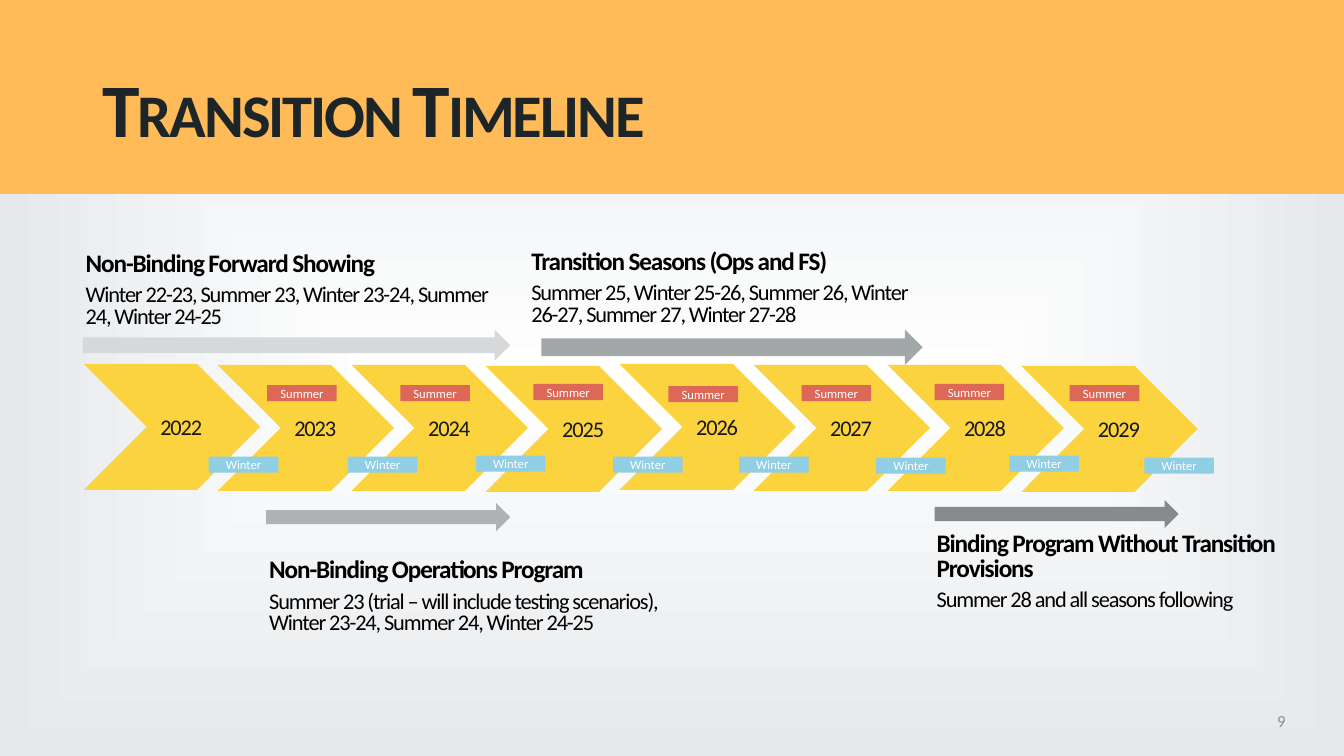
"""Build the transition timeline slide."""
from lxml.etree import SubElement
from pptx import Presentation
from pptx.dml.color import RGBColor
from pptx.enum.shapes import MSO_SHAPE as Preset
from pptx.enum.text import MSO_ANCHOR as Anchor, MSO_AUTO_SIZE as AutoSize, PP_ALIGN as Align
from pptx.oxml.ns import qn
from pptx.util import Inches, Pt


def color(hex_value):
    return RGBColor.from_string(hex_value)


def apply(target, values):
    for name, value in values.items():
        setattr(target, name, value)


class TimelineSlide:
    font_name = "Calibri"
    heading = {"size": Pt(18), "bold": True}
    body = {"size": Pt(16), "bold": False}
    tight = {"line_spacing": 0.8}
    snug = {"vertical_anchor": Anchor.MIDDLE, "auto_size": AutoSize.SHAPE_TO_FIT_TEXT,
            "margin_left": Inches(0.03), "margin_top": Inches(0.03),
            "margin_right": Inches(0.03), "margin_bottom": Inches(0.03)}

    def __init__(self, deck):
        self.slide = deck.slides.add_slide(deck.slide_layouts[6])
        self.shapes = self.slide.shapes

    def background(self, center, edge):
        fill = self.slide.background.fill
        fill.gradient()
        for stop, position, shade in zip(fill.gradient_stops, (0, 1), (center, edge)):
            stop.position = position
            stop.color.rgb = color(shade)
        gradient = next(self.slide.element.iter(qn("a:gradFill")))
        gradient.remove(gradient.find(qn("a:lin")))
        focus = SubElement(gradient, qn("a:path"), {"path": "shape"})
        SubElement(focus, qn("a:fillToRect"), dict.fromkeys("ltrb", "50000"))

    def add_text(self, paragraph, text, shade, font, layout, effects=None):
        apply(paragraph, layout)
        run = paragraph.add_run()
        run.text = text
        apply(run.font, {"name": self.font_name, **font})
        run.font.color.rgb = color(shade)
        for name, value in (effects or {}).items():
            run.font._element.set(name, value)

    def shape(self, preset, box, fill, parent=None):
        shape = (parent or self.shapes).add_shape(preset, *map(Inches, box))
        shape.shadow.inherit = False
        shape.fill.solid()
        shape.fill.fore_color.rgb = color(fill)
        shape.line.fill.background()
        return shape

    def text_frame(self, box, frame_format, parent=None):
        frame = (parent or self.shapes).add_textbox(*map(Inches, box)).text_frame
        apply(frame, {"word_wrap": True, **frame_format})
        return frame

    def banner(self, title, fill):
        band = self.shape(Preset.RECTANGLE, (0, -0.08, 13.33, 2), fill)
        band.line.color.rgb = color(fill)
        band.line.width = Pt(1)
        frame = self.text_frame((0.92, 0.4, 11.5, 1.45), {"vertical_anchor": Anchor.MIDDLE})
        self.add_text(frame.paragraphs[0], title, "1D2528", {"size": Pt(54), "bold": True},
                      {"line_spacing": 0.9}, {"spc": "-150", "cap": "small"})

    def page_number(self, number):
        frame = self.text_frame((12.23, 6.95, 0.62, 0.4), {"vertical_anchor": Anchor.MIDDLE})
        self.add_text(frame.paragraphs[0], number, "8B8C8D", {"size": Pt(12)},
                      {"alignment": Align.RIGHT})

    def year(self, label, left, top):
        group = self.shapes.add_group_shape().shapes
        self.shape(Preset.CHEVRON, (left, top, 1.75, 1.25), "FBD33F", group)
        frame = self.text_frame((left + 0.73, top + 0.51, 1.08, 0.27), self.snug, group)
        self.add_text(frame.paragraphs[0], label, "181818", {"size": Pt(16)},
                      self.tight, {"spc": "-80"})

    def season(self, name, left, top, fill):
        tag = self.shape(Preset.RECTANGLE, (left, top, 0.69, 0.16), fill)
        tag.text_frame.vertical_anchor = Anchor.MIDDLE
        self.add_text(tag.text_frame.paragraphs[0], name, "FFFFFF", {"size": Pt(9)},
                      {"alignment": Align.CENTER})

    def phase(self, name, seasons, left, top, height, arrow_box, arrow_fill):
        self.shape(Preset.RIGHT_ARROW, arrow_box, arrow_fill)
        frame = self.text_frame((left, top, 4.08, height),
                                {**self.snug, "vertical_anchor": Anchor.BOTTOM})
        self.add_text(frame.paragraphs[0], name, "000000", self.heading,
                      self.tight, {"spc": "-80"})
        self.add_text(frame.add_paragraph(), seasons, "000000", self.body,
                      {**self.tight, "space_before": Pt(6)}, {"spc": "-80"})


def main():
    deck = Presentation()
    deck.slide_width, deck.slide_height = Inches(13.33), Inches(7.5)
    timeline = TimelineSlide(deck)
    timeline.background("FFFFFF", "E5E9EC")
    timeline.banner("Transition Timeline", "FFBB58")
    timeline.page_number("9")

    first_left, last_left = 0.83, 10.13
    year_tops = (3.61, 3.62, 3.62, 3.63, 3.61, 3.62, 3.62, 3.63)
    pitch = (last_left - first_left) / (len(year_tops) - 1)
    for index, top in enumerate(year_tops):
        timeline.year(str(2022 + index), first_left + index * pitch, top)

    seasons = {
        ("Summer", "DD6858"): ((2.65, 3.82), (3.97, 3.82), (5.29, 3.81), (6.63, 3.83),
                               (7.95, 3.82), (9.27, 3.81), (10.61, 3.82)),
        ("Winter", "8FCEE3"): ((2.07, 4.53), (3.45, 4.53), (4.72, 4.52), (6.08, 4.53),
                               (7.33, 4.53), (8.69, 4.54), (10.01, 4.52), (11.35, 4.54)),
    }
    for (name, fill), places in seasons.items():
        for left, top in places:
            timeline.season(name, left, top, fill)

    phases = (
        ("Non-Binding Forward Showing",
         "Winter 22-23, Summer 23, Winter 23-24, Summer 24, Winter 24-25",
         0.82, 2.4, 0.89, (0.82, 3.27, 4.24, 0.31), "D6D8D9"),
        ("Non-Binding Operations Program",
         "Summer 23 (trial – will include testing scenarios), Winter 23-24, Summer 24, Winter 24-25",
         2.64, 5.22, 1.11, (2.64, 4.99, 2.42, 0.28), "AEB2B3"),
        ("Transition Seasons (Ops and FS)",
         "Summer 25, Winter 25-26, Summer 26, Winter 26-27, Summer 27, Winter 27-28",
         5.24, 2.38, 0.89, (5.37, 3.27, 3.78, 0.35), "A2A7A8"),
        ("Binding Program Without Transition Provisions",
         "Summer 28 and all seasons following",
         9.26, 5.18, 0.92, (9.27, 4.96, 2.42, 0.28), "858B8D"),
    )
    for phase in phases:
        timeline.phase(*phase)
    deck.save("out.pptx")


if __name__ == "__main__":
    main()
